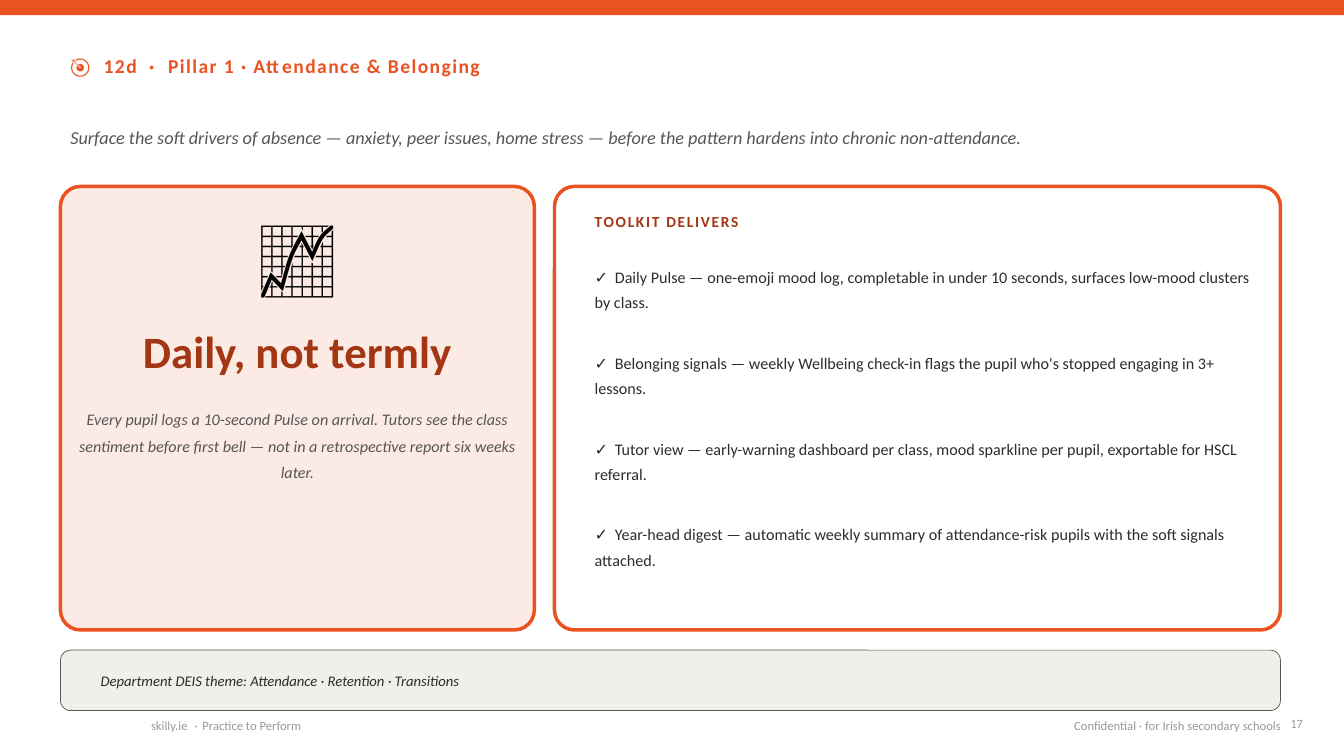
from dataclasses import dataclass

from lxml import etree
from pptx import Presentation
from pptx.dml.color import RGBColor
from pptx.enum.shapes import MSO_SHAPE
from pptx.enum.text import MSO_ANCHOR, PP_ALIGN
from pptx.oxml.ns import qn
from pptx.util import Inches, Pt

RECT, ROUNDED = MSO_SHAPE.RECTANGLE, MSO_SHAPE.ROUNDED_RECTANGLE
TOP, MIDDLE = MSO_ANCHOR.TOP, MSO_ANCHOR.MIDDLE
LEFT, CENTER, RIGHT = PP_ALIGN.LEFT, PP_ALIGN.CENTER, PP_ALIGN.RIGHT


@dataclass(frozen=True)
class Theme:
    font: str = "Calibri"
    orange: str = "EA5321"
    rust: str = "A33714"
    blush: str = "FCEAE4"
    white: str = "FFFFFF"
    stone: str = "F1EFEA"
    ink: str = "2C2C2A"
    grey: str = "555656"
    pale: str = "999999"
    black: str = "000000"
    icon_size: float = 56
    headline_size: float = 32
    title_size: float = 14
    lead_size: float = 13
    body_size: float = 11.5
    label_size: float = 11
    theme_size: float = 10.5
    footer_size: float = 9


THEME = Theme()

deck = Presentation()
deck.slide_width, deck.slide_height = Inches(13.33), Inches(7.5)
slide = deck.slides.add_slide(deck.slide_layouts[6])


def add_panel(kind, box, fill, line=None, width=0, corner=None):
    panel = slide.shapes.add_shape(kind, *map(Inches, box))
    panel.shadow.inherit = False
    panel.fill.solid()
    panel.fill.fore_color.rgb = RGBColor.from_string(fill)
    if line:
        panel.line.color.rgb = RGBColor.from_string(line)
        panel.line.width = Pt(width)
    else:
        panel.line.fill.background()
    if corner is not None:
        panel.adjustments[0] = corner


def add_text(text, box, size, color, anchor=MIDDLE, align=LEFT, bold=False,
             italic=False, leading=None, tracking=0, tabs=()):
    frame = slide.shapes.add_textbox(*map(Inches, box)).text_frame
    frame.word_wrap = True
    frame.vertical_anchor = anchor
    paragraph = frame.paragraphs[0]
    paragraph.alignment = align
    if leading:
        paragraph.line_spacing = leading
    if tabs:
        stops = etree.SubElement(paragraph._p.get_or_add_pPr(), qn("a:tabLst"))
        for stop in tabs:
            etree.SubElement(stops, qn("a:tab"), pos=str(Inches(stop)), algn="l")
    run = paragraph.add_run()
    run.text = text
    if tracking:
        run._r.get_or_add_rPr().set("spc", str(round(tracking * 100)))
    font = paragraph.font
    font.name, font.size = THEME.font, Pt(size)
    font.bold, font.italic = bold, italic
    font.color.rgb = RGBColor.from_string(color)


# Top band and footer
add_panel(RECT, (0, 0, 13.33, 0.15), THEME.orange)
add_text("skilly.ie\t·\tPractice to Perform", (1.4, 7.05, 7, 0.3),
         THEME.footer_size, THEME.pale, tabs=(0.43, 0.51))
add_text("Confidential · for Irish secondary schools", (8.4, 7.05, 4.4, 0.3),
         THEME.footer_size, THEME.pale, align=RIGHT)
add_text("17", (12.7, 7.05, 0.5, 0.3), THEME.footer_size, THEME.pale, anchor=TOP)

# Title and lead sentence
add_text("🎯\t12d\t·\tPillar 1 · Attendance & Belonging", (0.6, 0.4, 12, 0.5),
         THEME.title_size, THEME.orange, bold=True, tracking=1,
         tabs=(0.33, 0.78, 0.97))
add_text("Surface the soft drivers of absence — anxiety, peer issues, home stress — "
         "before the pattern hardens into chronic non-attendance.",
         (0.6, 1.05, 12.1, 0.55), THEME.lead_size, THEME.grey, italic=True, leading=1.3)

# Headline card
add_panel(ROUNDED, (0.6, 1.85, 4.7, 4.4), THEME.blush, THEME.orange, 2.5, 0.045)
add_text("📈", (0.6, 2, 4.7, 1), THEME.icon_size, THEME.black, TOP, CENTER)
add_text("Daily, not termly", (0.6, 3.05, 4.7, 0.85), THEME.headline_size,
         THEME.rust, align=CENTER, bold=True)
add_text("Every pupil logs a 10-second Pulse on arrival. Tutors see the class sentiment "
         "before first bell — not in a retrospective report six weeks later.",
         (0.6, 3.95, 4.7, 1.95), THEME.body_size, THEME.grey, TOP, CENTER,
         italic=True, leading=1.35)

# Deliverables card
add_panel(ROUNDED, (5.5, 1.85, 7.2, 4.4), THEME.white, THEME.orange, 2.5, 0.045)
add_text("TOOLKIT DELIVERS", (5.8, 2, 6.7, 0.4), THEME.label_size, THEME.rust,
         bold=True, tracking=1.2)
deliverables = [
    "Daily Pulse — one-emoji mood log, completable in under 10 seconds, "
    "surfaces low-mood clusters by class.",
    "Belonging signals — weekly Wellbeing check-in flags the pupil who's "
    "stopped engaging in 3+ lessons.",
    "Tutor view — early-warning dashboard per class, mood sparkline per pupil, "
    "exportable for HSCL referral.",
    "Year-head digest — automatic weekly summary of attendance-risk pupils "
    "with the soft signals attached.",
]
for row, deliverable in enumerate(deliverables):
    add_text(f"✓\t{deliverable}", (5.8, 2.55 + 0.85 * row, 6.7, 0.8),
             THEME.body_size, THEME.ink, TOP, leading=1.3, tabs=(0.2,))

# Department theme strip
add_panel(ROUNDED, (0.6, 6.45, 12.1, 0.6), THEME.stone, THEME.grey, 0.5, 0.167)
add_text("Department DEIS theme: Attendance · Retention · Transitions",
         (0.9, 6.5, 11.5, 0.5), THEME.theme_size, THEME.ink, italic=True)

deck.save("out.pptx")
